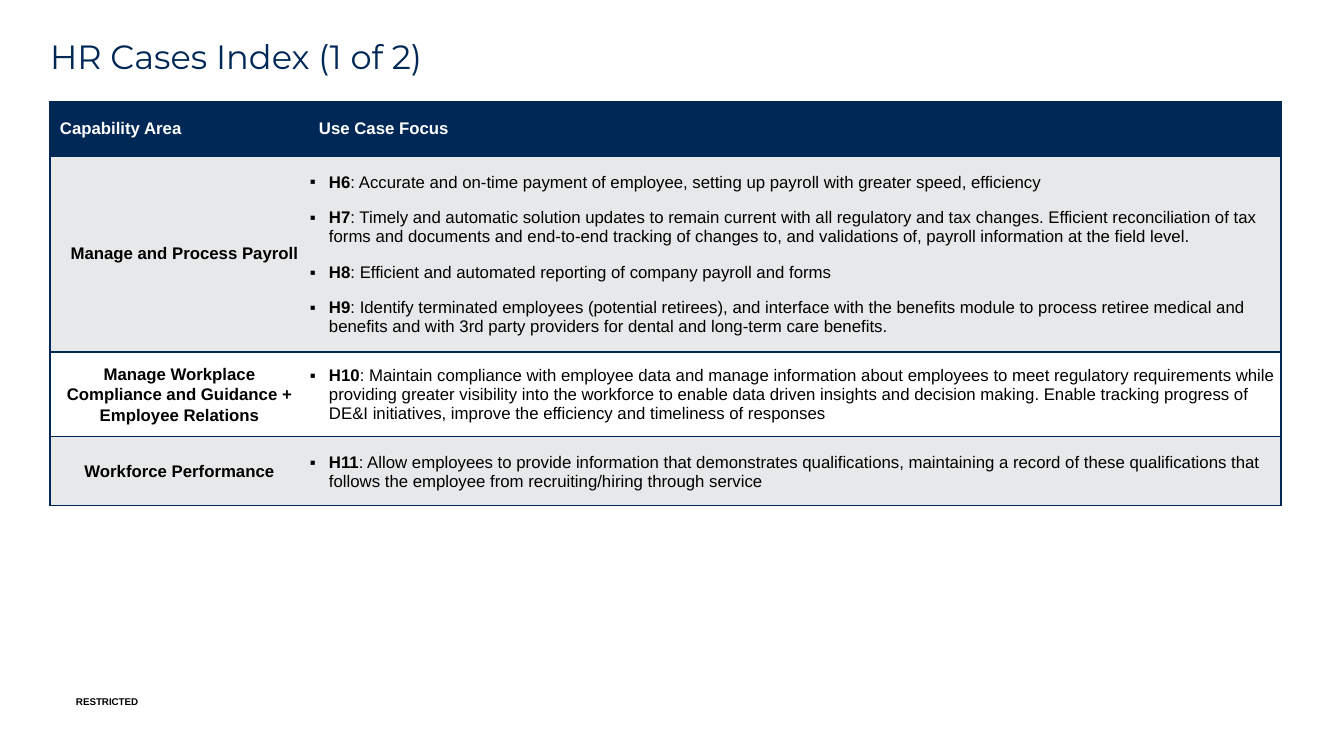
from pptx import Presentation
from pptx.dml.color import RGBColor
from pptx.enum.text import MSO_ANCHOR, PP_ALIGN
from pptx.util import Pt
from lxml.etree import SubElement
from pptx.oxml.ns import qn

PX = 914400 / 100.8
COLORS = {"navy": "002856", "grey": "E7E8E9", "white": "FFFFFF", "black": "000000"}


def px(n):
    return round(n * PX)


def add_run(para, text, size, color, bold=False, face="Arial"):
    run = para.add_run()
    run.text = text
    run.font.size = Pt(size)
    run.font.name = face
    run.font.bold = bold
    run.font.color.rgb = RGBColor.from_string(COLORS[color])


prs = Presentation()
prs.slide_width, prs.slide_height = px(1344), px(756)
slide = prs.slides.add_slide(prs.slide_layouts[5])

# Title
title = slide.shapes.title
title.left, title.top, title.width, title.height = px(50), px(40), px(1243), px(58)

# Footer label
label = slide.shapes.add_textbox(px(76), px(695), px(470), px(12))

for box, anchor in ((title, MSO_ANCHOR.TOP), (label, MSO_ANCHOR.BOTTOM)):
    frame = box.text_frame
    frame.word_wrap = True
    frame.vertical_anchor = anchor
    frame.margin_left = frame.margin_right = frame.margin_top = frame.margin_bottom = 0
    frame.paragraphs[0].alignment = PP_ALIGN.LEFT

head = title.text_frame.paragraphs[0]
head.line_spacing = 0.9
add_run(head, "HR Cases Index (1 of 2)", 24, "navy", face="Montserrat")
add_run(label.text_frame.paragraphs[0], "RESTRICTED", 7, "black", True)

# Table content: area, then its use cases
areas = [
    ("Manage and Process Payroll", [
        ("H6", "Accurate and on-time payment of employee, setting up payroll with "
               "greater speed, efficiency"),
        ("H7", "Timely and automatic solution updates to remain current with all "
               "regulatory and tax changes. Efficient reconciliation of tax forms and "
               "documents and end-to-end tracking of changes to, and validations of, "
               "payroll information at the field level."),
        ("H8", "Efficient and automated reporting of company payroll and forms"),
        ("H9", "Identify terminated employees (potential retirees), and interface with "
               "the benefits module to process retiree medical and benefits and with "
               "3rd party providers for dental and long-term care benefits."),
    ]),
    ("Manage Workplace Compliance and Guidance + Employee Relations", [
        ("H10", "Maintain compliance with employee data and manage information about "
                "employees to meet regulatory requirements while providing greater "
                "visibility into the workforce to enable data driven insights and "
                "decision making. Enable tracking progress of DE&I initiatives, improve "
                "the efficiency and timeliness of responses"),
    ]),
    ("Workforce Performance", [
        ("H11", "Allow employees to provide information that demonstrates "
                "qualifications, maintaining a record of these qualifications that "
                "follows the employee from recruiting/hiring through service"),
    ]),
]
widths, heights = (259, 972), (54, 196, 85, 69)
table = slide.shapes.add_table(4, 2, px(50), px(102), px(sum(widths)), px(sum(heights))).table
table.horz_banding = False
for col, width in zip(table.columns, widths):
    col.width = px(width)
for row, height in zip(table.rows, heights):
    row.height = px(height)

# Cell borders and fills
fills = ("navy", "grey", "white", "grey")
for row, fill in zip(table.rows, fills):
    for cell, inner in zip(row.cells, ("R", "L")):
        cell.vertical_anchor = MSO_ANCHOR.MIDDLE
        cell.margin_left = cell.margin_right = px(10)
        props = cell._tc.get_or_add_tcPr()
        for side in "LRTB":
            line = SubElement(props, qn("a:ln" + side), w=str(Pt(1)))
            if side == inner:
                SubElement(line, qn("a:noFill"))
            else:
                solid = SubElement(line, qn("a:solidFill"))
                SubElement(solid, qn("a:srgbClr"), val=COLORS["navy"])
        cell.fill.solid()
        cell.fill.fore_color.rgb = RGBColor.from_string(COLORS[fill])

# Header row
for cell, text in zip(table.rows[0].cells, ("Capability Area", "Use Case Focus")):
    add_run(cell.text_frame.paragraphs[0], text, 12, "white", True)

# Body rows
for i, (area, cases) in enumerate(areas, 1):
    para = table.cell(i, 0).text_frame.paragraphs[0]
    para.alignment = PP_ALIGN.CENTER
    if i == 1:
        para._p.get_or_add_pPr().set("marL", str(px(10)))
        para.space_after = Pt(6)
    else:
        para.line_spacing = 1.07
        para.space_after = Pt(8)
    add_run(para, area, 12, "black", True)

    cell = table.cell(i, 1)
    cell.margin_left = cell.margin_right = cell.margin_top = px(1)
    cell.margin_bottom = 0
    frame = cell.text_frame
    for j, (code, text) in enumerate(cases):
        para = frame.add_paragraph() if j else frame.paragraphs[0]
        props = para._p.get_or_add_pPr()
        props.set("marL", str(px(19)))
        props.set("indent", str(px(-19)))
        SubElement(props, qn("a:buFont"), typeface="Arial")
        SubElement(props, qn("a:buChar"), char="▪")
        para.space_before = Pt(6 if j else 0)
        para.space_after = Pt(6)
        add_run(para, code, 12, "black", True)
        add_run(para, ": " + text, 12, "black")

prs.save("out.pptx")
